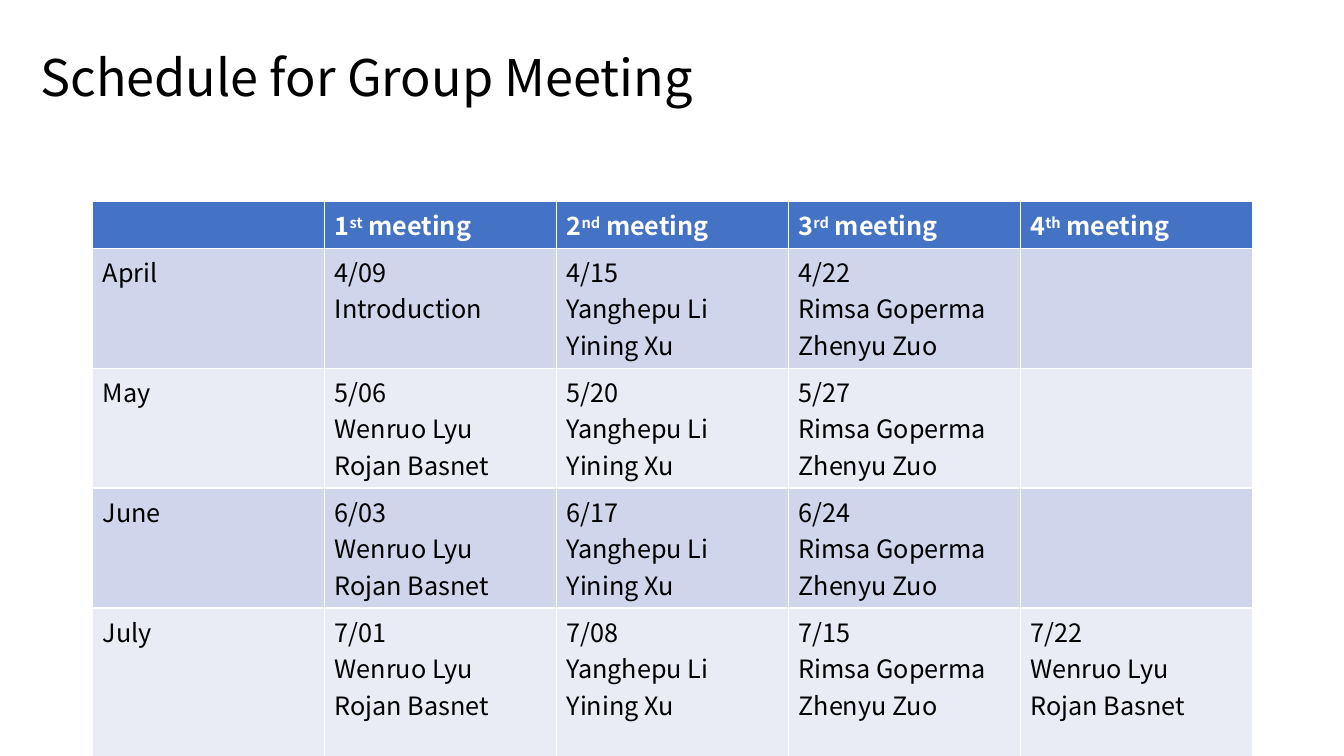
from pptx import Presentation
from pptx.dml.color import RGBColor
from pptx.enum.text import MSO_ANCHOR, PP_ALIGN
from pptx.util import Inches, Pt

FIRST_PAIR = ["Wenruo Lyu", "Rojan Basnet"]
SECOND_PAIR = ["Yanghepu Li", "Yining Xu"]
THIRD_PAIR = ["Rimsa Goperma", "Zhenyu Zuo"]
PAIRS = [FIRST_PAIR, SECOND_PAIR, THIRD_PAIR, FIRST_PAIR]

ORDINALS = ["st", "nd", "rd", "th"]
MONTHS = {
    "April": ["4/09", "4/15", "4/22"],
    "May": ["5/06", "5/20", "5/27"],
    "June": ["6/03", "6/17", "6/24"],
    "July": ["7/01", "7/08", "7/15", "7/22"],
}
ROW_HEIGHTS = [0.45, 1.19, 1.19, 1.19, 1.48]
COLUMN_WIDTH = 2.3


def color(value):
    return RGBColor.from_string(value)


class SchedulePage:
    font_name = "Noto Sans CJK SC"
    text_color = "000000"
    header_text = "FFFFFF"
    header_fill = "4472C4"
    band_fills = ["CFD5EA", "E9EBF5"]

    def __init__(self, deck):
        self.page = deck.slides.add_slide(deck.slide_layouts[5])

    def style(self, para, size, text_color, bold=False):
        para.font.name = self.font_name
        para.font.size = Pt(size)
        para.font.bold = bold
        para.font.color.rgb = color(text_color)

    def title(self, text, left, top, width, height):
        box = self.page.shapes.title
        box.left, box.top = Inches(left), Inches(top)
        box.width, box.height = Inches(width), Inches(height)
        box.text_frame.vertical_anchor = MSO_ANCHOR.MIDDLE
        para = box.text_frame.paragraphs[0]
        para.text = text
        para.alignment = PP_ALIGN.LEFT
        para.line_spacing = 0.9
        self.style(para, 36, self.text_color)

    def table(self, left, top, column_count):
        frame = self.page.shapes.add_table(
            len(ROW_HEIGHTS), column_count, Inches(left), Inches(top),
            Inches(COLUMN_WIDTH * column_count), Inches(sum(ROW_HEIGHTS)))
        table = frame.table
        for column in table.columns:
            column.width = Inches(COLUMN_WIDTH)
        for row, height in zip(table.rows, ROW_HEIGHTS):
            row.height = Inches(height)
        return table

    def fill(self, cell, fill_color):
        cell.fill.solid()
        cell.fill.fore_color.rgb = color(fill_color)

    def header_cell(self, cell, number, ordinal):
        para = cell.text_frame.paragraphs[0]
        self.style(para, 18, self.header_text, bold=True)
        for text in (str(number), ordinal, " meeting"):
            span = para.add_run()
            span.text = text
            if text == ordinal:
                span.font._element.set("baseline", "30000")

    def body_cell(self, cell, lines):
        cell.text = "\n".join(lines)
        for para in cell.text_frame.paragraphs:
            self.style(para, 18, self.text_color)


def main():
    deck = Presentation()
    deck.slide_width, deck.slide_height = Inches(13.33), Inches(7.5)
    schedule = SchedulePage(deck)
    schedule.title("Schedule for Group Meeting", 0.3, 0.07, 11.5, 1.45)
    table = schedule.table(0.92, 2, len(ORDINALS) + 1)

    # Header row
    for cell in table.rows[0].cells:
        schedule.fill(cell, schedule.header_fill)
    for number, ordinal in enumerate(ORDINALS, 1):
        schedule.header_cell(table.cell(0, number), number, ordinal)

    # One banded row per month
    for row, (month, dates) in enumerate(MONTHS.items(), 1):
        for cell in table.rows[row].cells:
            schedule.fill(cell, schedule.band_fills[(row - 1) % 2])
        schedule.body_cell(table.cell(row, 0), [month])
        for column, (date, pair) in enumerate(zip(dates, PAIRS), 1):
            speakers = ["Introduction"] if date == "4/09" else pair
            schedule.body_cell(table.cell(row, column), [date, *speakers])

    deck.save("out.pptx")


if __name__ == "__main__":
    main()
